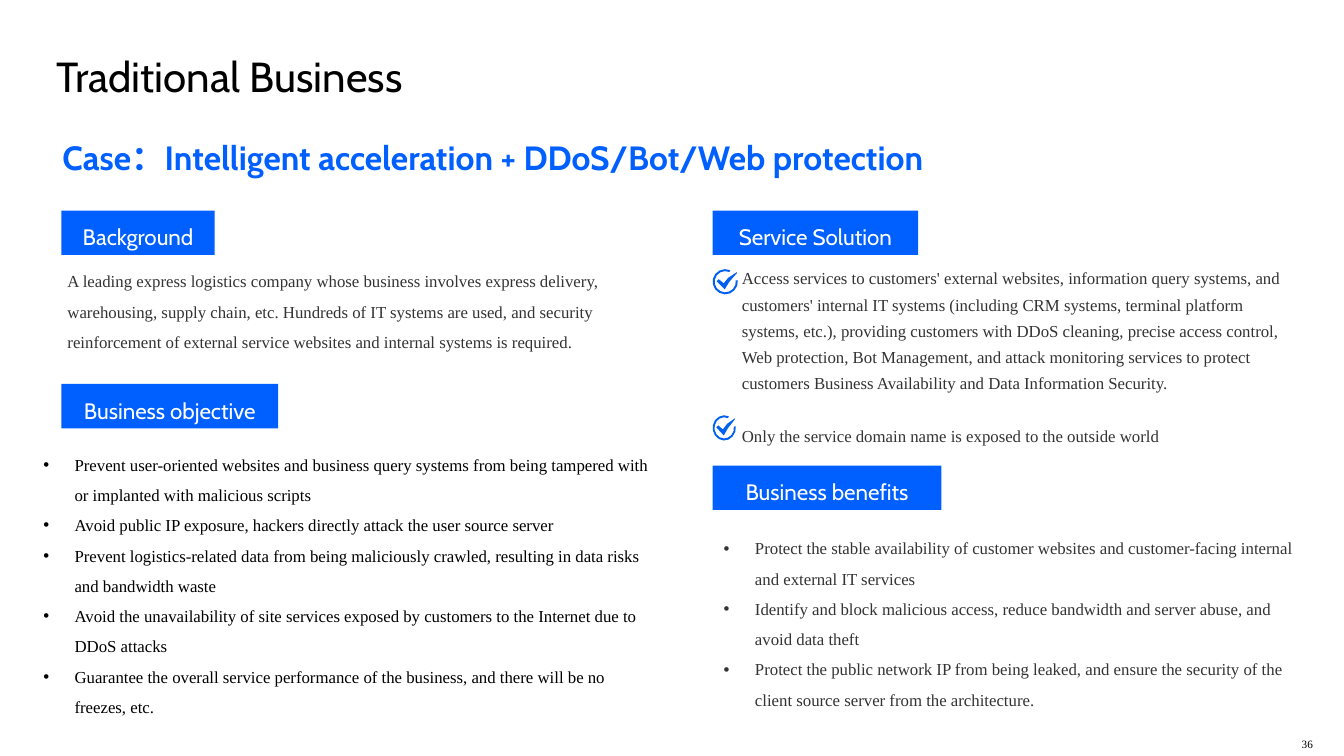
from math import cos, radians, sin

from lxml import etree
from pptx import Presentation
from pptx.dml.color import RGBColor
from pptx.enum.shapes import MSO_SHAPE
from pptx.enum.text import MSO_ANCHOR, MSO_AUTO_SIZE as AUTO_SIZE, PP_ALIGN
from pptx.oxml.ns import qn
from pptx.util import Inches, Pt

PX = 9144  # 100 px to the inch
BLUE = RGBColor(0x00, 0x60, 0xFF)
ICON_BLUE = RGBColor(0x00, 0x60, 0xF0)
BLACK = RGBColor(0, 0, 0)
GREY = RGBColor(0x33, 0x33, 0x33)
WHITE = RGBColor(0xFF, 0xFF, 0xFF)
SERIF, SANS = "Times New Roman", "Cabin"
LEFT, RIGHT = 61, 707

deck = Presentation()
deck.slide_height = Inches(7.5)
deck.slide_width = deck.slide_height * 16 // 9
page = deck.slides.add_slide(deck.slide_layouts[6])


def write(box, text, size, color, font=SERIF, spacing=1.0, align=PP_ALIGN.LEFT,
          inset=6, wrap=True, bold=False, bullets=False):
    frame = box.text_frame
    frame.text = text
    frame.word_wrap = wrap
    frame.auto_size = AUTO_SIZE.SHAPE_TO_FIT_TEXT
    frame.margin_left = frame.margin_right = inset * PX
    frame.margin_top = frame.margin_bottom = inset * PX
    for para in frame.paragraphs:
        para.alignment = align
        para.line_spacing = spacing
        if bullets:
            props = para._p.get_or_add_pPr()
            props.set("marL", str(31 * PX))
            props.set("indent", str(-31 * PX))
            etree.SubElement(props, qn("a:buFont")).set("typeface", "Arial")
            etree.SubElement(props, qn("a:buChar")).set("char", "•")
        for span in para.runs:
            span.font.name = font
            span.font.size = Pt(size)
            span.font.bold = bold
            span.font.color.rgb = color
    return frame


def add_text(left, top, width, height, *args, **style):
    box = page.shapes.add_textbox(left * PX, top * PX, width * PX, height * PX)
    return write(box, *args, **style)


# Page number, title and case line
add_text(1285, 725, 24, 25, "36", 8, BLACK, align=PP_ALIGN.CENTER, wrap=False)
add_text(56, 40, 465, 60, "Traditional Business", 30, BLACK, SANS, 1.2, inset=0)
case = add_text(56, 119, 914, 62,
                "Case：Intelligent acceleration + DDoS/Bot/Web protection",
                24, BLUE, SANS, 1.3, wrap=False, bold=True)
case.vertical_anchor = MSO_ANCHOR.MIDDLE

# Body texts
add_text(61, 253, 583, 100,
         "A leading express logistics company whose business involves express "
         "delivery, warehousing, supply chain, etc. Hundreds of IT systems are "
         "used, and security reinforcement of external service websites and "
         "internal systems is required.", 12, GREY, spacing=1.5)

objectives = [
    "Prevent user-oriented websites and business query systems from being "
    "tampered with or implanted with malicious scripts",
    "Avoid public IP exposure, hackers directly attack the user source server",
    "Prevent logistics-related data from being maliciously crawled, resulting "
    "in data risks and bandwidth waste",
    "Avoid the unavailability of site services exposed by customers to the "
    "Internet due to DDoS attacks",
    "Guarantee the overall service performance of the business, and there will "
    "be no freezes, etc.",
]
add_text(37, 435, 618, 280, "\n".join(objectives), 12, BLACK, spacing=1.5, bullets=True)

solutions = [
    "Access services to customers' external websites, information query systems, "
    "and customers' internal IT systems (including CRM systems, terminal platform "
    "systems, etc.), providing customers with DDoS cleaning, precise access "
    "control, Web protection, Bot Management, and attack monitoring services to "
    "protect customers Business Availability and Data Information Security.",
    "Only the service domain name is exposed to the outside world",
]
solution = add_text(730, 254, 565, 192, "\n".join(solutions), 12, GREY, spacing=1.3)
solution.paragraphs[1].space_before = Pt(19)

benefits = [
    "Protect the stable availability of customer websites and customer-facing "
    "internal and external IT services",
    "Identify and block malicious access, reduce bandwidth and server abuse, and "
    "avoid data theft",
    "Protect the public network IP from being leaked, and ensure the security of "
    "the client source server from the architecture.",
]
add_text(712, 518, 588, 190, "\n".join(benefits), 12, GREY, spacing=1.5, bullets=True)

# Section labels
for left, top, width, label in [
    (LEFT, 209, 152, "Background"),
    (LEFT, 381, 215, "Business objective"),
    (RIGHT, 209, 204, "Service Solution"),
    (RIGHT, 462, 227, "Business benefits"),
]:
    tag = page.shapes.add_shape(MSO_SHAPE.RECTANGLE, left * PX, top * PX,
                                width * PX, 44 * PX)
    tag.shadow.inherit = False
    tag.fill.solid()
    tag.fill.fore_color.rgb = BLUE
    tag.line.fill.background()
    frame = write(tag, label, 16, WHITE, SANS, 1.3, PP_ALIGN.CENTER)
    frame.vertical_anchor = MSO_ANCHOR.MIDDLE

# Check icons on a 250-unit grid: a tick inside an open ring
tick = [(120, 200), (40, 120), (60, 100), (110, 140), (156, 85),
        (240, 30), (240, 40), (165, 127)]
arc = range(-7, 294, 25)
ring = [(125 + radius * cos(radians(angle)), 125 + radius * sin(radians(angle)))
        for radius, angles in ((125, arc), (105, reversed(arc)))
        for angle in angles]
for top, width in [(267, 25), (412, 23)]:
    builder = page.shapes.build_freeform(*tick[0], scale=(width * PX / 250, PX / 10))
    builder.add_line_segments(tick[1:])
    builder.move_to(*ring[0])
    builder.add_line_segments(ring[1:])
    check = builder.convert_to_shape(RIGHT * PX, top * PX)
    check.shadow.inherit = False
    check.fill.solid()
    check.fill.fore_color.rgb = ICON_BLUE
    check.line.fill.background()

deck.save("out.pptx")
